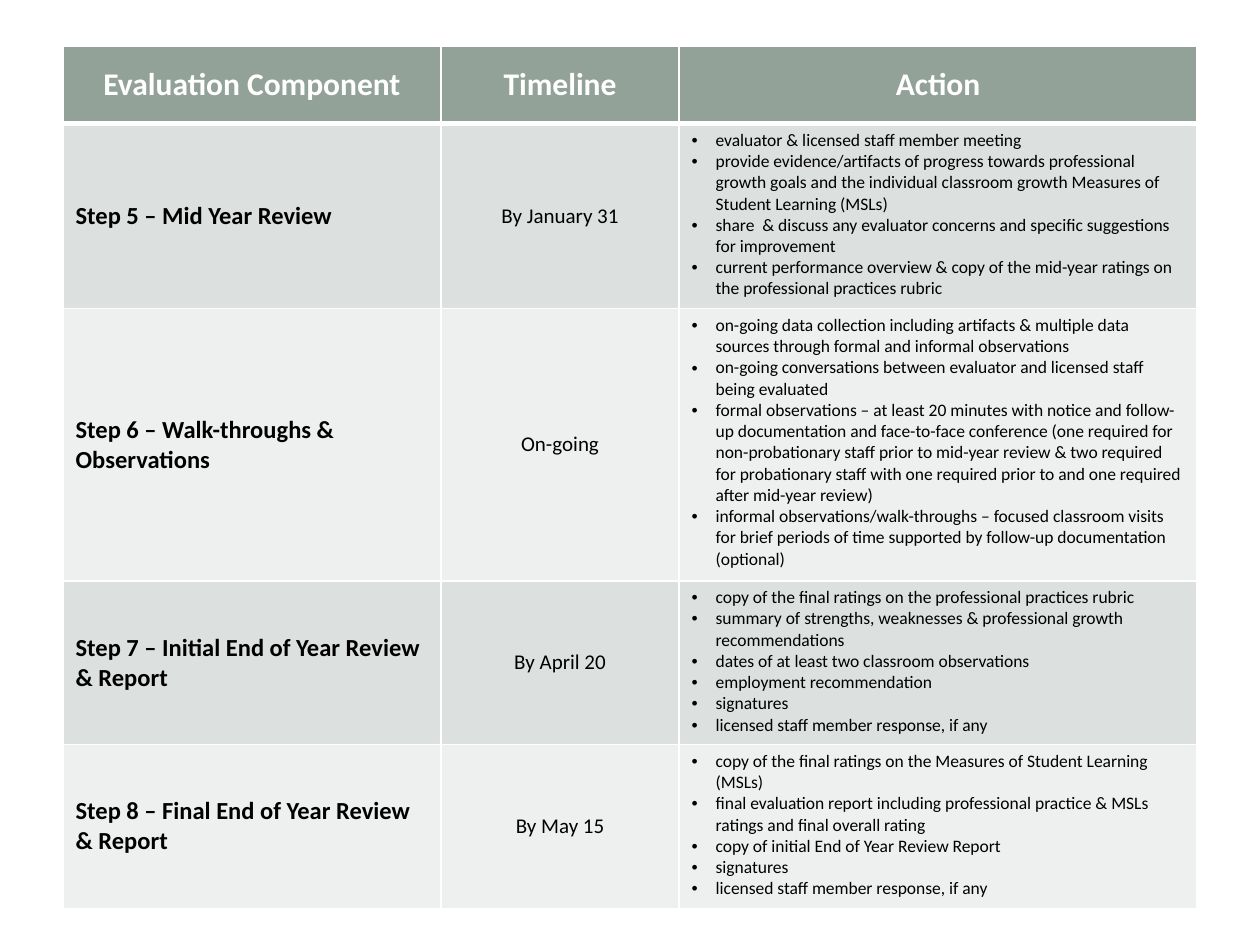
"""Build a slide with a table of evaluation steps, their timeline and actions."""
from lxml import etree
from pptx import Presentation
from pptx import util as u
from pptx.dml.color import RGBColor
from pptx.enum import text
from pptx.oxml.ns import qn

THEME = {
    "font": "Calibri",
    "header_fill": "93A299",
    "bands": ["DCE0DE", "EEF0EF"],
    "light": "FFFFFF",
    "dark": "000000",
    "header_size": 18,
    "body_sizes": [14, 12, 10],
    "rule": 1,
    "header_rule": 3,
}
LEFT, TOP = 0.5, 0.37
COLUMNS = [3, 1.89, 4.11]
ROWS = [0.61, 1.47, 2.16, 1.3, 1.3]
INDENT = u.Inches(0.19)

HEADERS = ["Evaluation Component", "Timeline", "Action"]
STEPS = [
    ("Step 5 – Mid Year Review", "By January 31", [
        "evaluator & licensed staff member meeting",
        "provide evidence/artifacts of progress towards professional growth goals and "
        "the individual classroom growth Measures of Student Learning (MSLs)",
        "share  & discuss any evaluator concerns and specific suggestions for improvement",
        "current performance overview & copy of the mid-year ratings on the "
        "professional practices rubric",
    ]),
    ("Step 6 – Walk-throughs & Observations", "On-going", [
        "on-going data collection including artifacts & multiple data sources through "
        "formal and informal observations",
        "on-going conversations between evaluator and licensed staff being evaluated",
        "formal observations – at least 20 minutes with notice and follow-up documentation "
        "and face-to-face conference (one required for non-probationary staff prior to "
        "mid-year review & two required for probationary staff with one required prior to "
        "and one required after mid-year review)",
        "informal observations/walk-throughs – focused classroom visits for brief periods "
        "of time supported by follow-up documentation (optional)",
    ]),
    ("Step 7 – Initial End of Year Review & Report", "By April 20", [
        "copy of the final ratings on the professional practices rubric",
        "summary of strengths, weaknesses & professional growth recommendations",
        "dates of at least two classroom observations",
        "employment recommendation",
        "signatures",
        "licensed staff member response, if any",
    ]),
    ("Step 8 – Final End of Year Review & Report", "By May 15", [
        "copy of the final ratings on the Measures of Student Learning (MSLs)",
        "final evaluation report including professional practice & MSLs ratings and "
        "final overall rating",
        "copy of initial End of Year Review Report",
        "signatures",
        "licensed staff member response, if any",
    ]),
]


def add_borders(cell, row):
    widths = {"L": THEME["rule"], "R": THEME["rule"],
              "T": THEME["header_rule"] if row == 1 else THEME["rule"],
              "B": THEME["header_rule"] if row == 0 else THEME["rule"]}
    properties = cell._tc.get_or_add_tcPr()
    for side, width in widths.items():
        line = etree.SubElement(properties, qn(f"a:ln{side}"), w=str(u.Pt(width)))
        fill = etree.SubElement(line, qn("a:solidFill"))
        etree.SubElement(fill, qn("a:srgbClr"), val=THEME["light"])


def add_bullet(paragraph):
    properties = paragraph._p.get_or_add_pPr()
    properties.set("marL", str(INDENT))
    properties.set("indent", str(-INDENT))
    etree.SubElement(properties, qn("a:buFont"), typeface="Arial")
    etree.SubElement(properties, qn("a:buChar"), char="•")


presentation = Presentation()
presentation.slide_width, presentation.slide_height = u.Inches(10), u.Inches(7.5)
slide = presentation.slides.add_slide(presentation.slide_layouts[6])
frame = slide.shapes.add_table(
    len(ROWS), len(COLUMNS), u.Inches(LEFT), u.Inches(TOP),
    u.Inches(sum(COLUMNS)), u.Inches(sum(ROWS)))
table = frame.table
for column, width in zip(table.columns, COLUMNS):
    column.width = u.Inches(width)
for table_row, height in zip(table.rows, ROWS):
    table_row.height = u.Inches(height)

for row, contents in enumerate([HEADERS, *STEPS]):
    header = row == 0
    for column, content in enumerate(contents):
        cell = table.cell(row, column)
        bulleted = isinstance(content, list)
        add_borders(cell, row)
        cell.fill.solid()
        cell.fill.fore_color.rgb = RGBColor.from_string(
            THEME["header_fill"] if header else THEME["bands"][(row - 1) % 2])
        cell.vertical_anchor = text.MSO_ANCHOR.TOP if bulleted else text.MSO_ANCHOR.MIDDLE
        cell.text_frame.text = "\n".join(content) if bulleted else content
        for paragraph in cell.text_frame.paragraphs:
            if bulleted:
                add_bullet(paragraph)
            elif header or column == 1:
                paragraph.alignment = text.PP_ALIGN.CENTER
            font = paragraph.runs[0].font
            font.name = THEME["font"]
            font.size = u.Pt(THEME["header_size"] if header else THEME["body_sizes"][column])
            font.bold = header or column == 0
            font.color.rgb = RGBColor.from_string(THEME["light"] if header else THEME["dark"])

presentation.save("out.pptx")
